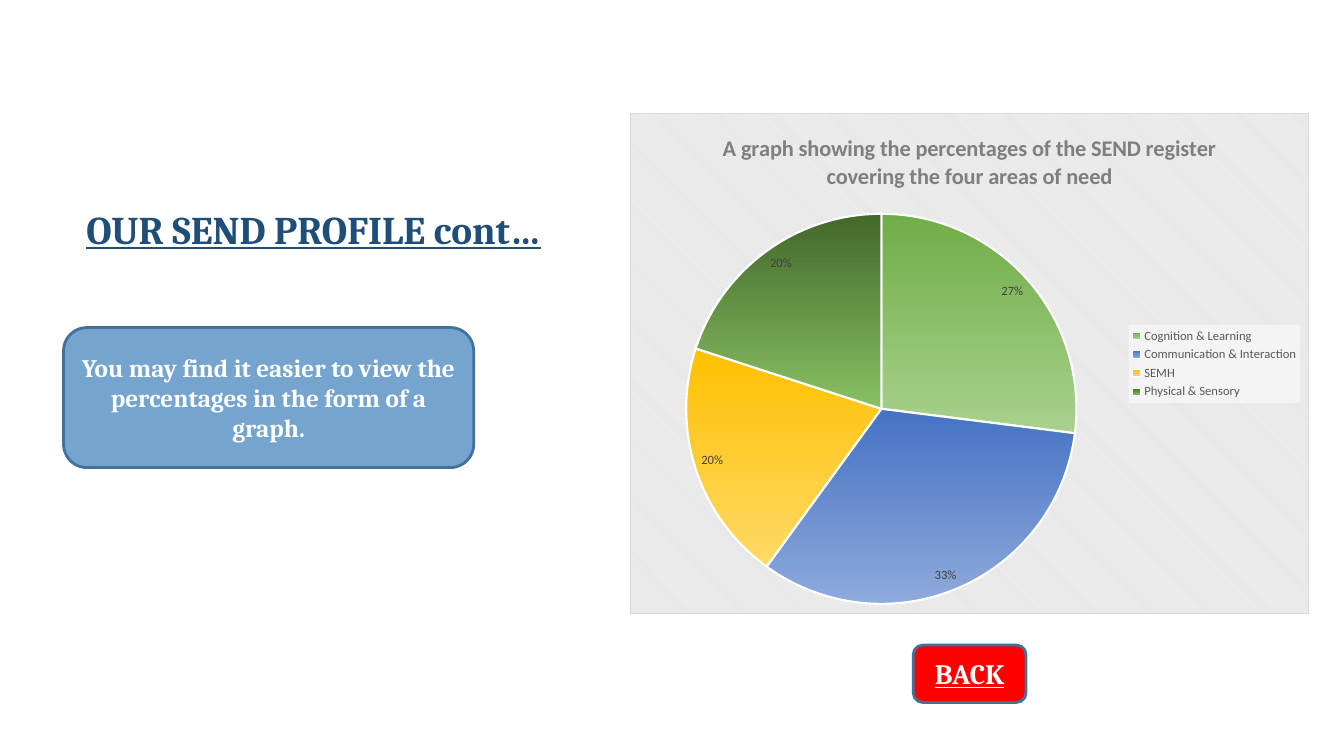
"""Build the SEND profile slide with a pie chart of the four areas of need."""
import lxml.etree
import pptx
import pptx.chart.data
import pptx.dml.color
import pptx.enum.chart
import pptx.enum.dml
import pptx.enum.shapes
import pptx.enum.text
import pptx.oxml
import pptx.oxml.ns
import pptx.util

Pt = pptx.util.Pt
RGBColor = pptx.dml.color.RGBColor
qn = pptx.oxml.ns.qn

NAVY = RGBColor(0x1E, 0x4E, 0x79)
BLUE = RGBColor(0x2E, 0x75, 0xB5)
OUTLINE = RGBColor(0x42, 0x71, 0x9B)
RED = RGBColor(0xFF, 0x00, 0x00)
WHITE = RGBColor(0xFF, 0xFF, 0xFF)
BLACK = RGBColor(0x00, 0x00, 0x00)
TITLE_GREY = RGBColor(0x7F, 0x7F, 0x7F)
LEGEND_GREY = RGBColor(0x59, 0x59, 0x59)
LABEL_GREY = RGBColor(0x40, 0x40, 0x40)
AREAS = [
    ("Cognition & Learning", 0.27, RGBColor(0x70, 0xAD, 0x47), RGBColor(0xA9, 0xD1, 0x8E)),
    ("Communication & Interaction", 0.33, RGBColor(0x44, 0x72, 0xC4), RGBColor(0x8F, 0xAA, 0xDC)),
    ("SEMH", 0.2, RGBColor(0xFF, 0xC0, 0x00), RGBColor(0xFF, 0xD9, 0x66)),
    ("Physical & Sensory", 0.2, RGBColor(0x43, 0x68, 0x2B), RGBColor(0x89, 0xC0, 0x64)),
]
NAMESPACES = (
    'xmlns:c="http://schemas.openxmlformats.org/drawingml/2006/chart" '
    'xmlns:a="http://schemas.openxmlformats.org/drawingml/2006/main"'
)


def style_font(font, name, size, color, bold=False, underline=False):
    font.name = name
    font.size = Pt(size)
    font.bold = bold
    font.underline = underline
    font.color.rgb = color


def write_centred(shape, text, size, color, underline):
    frame = shape.text_frame
    frame.word_wrap = True
    frame.vertical_anchor = pptx.enum.text.MSO_ANCHOR.MIDDLE
    paragraph = frame.paragraphs[0]
    paragraph.alignment = pptx.enum.text.PP_ALIGN.CENTER
    run = paragraph.add_run()
    run.text = text
    style_font(run.font, "Cambria", size, color, True, underline)
    return paragraph


presentation = pptx.Presentation()
presentation.slide_width = Pt(960)
presentation.slide_height = Pt(540)
slide = presentation.slides.add_slide(presentation.slide_layouts[5])

title = slide.shapes.title
title.left, title.top, title.width, title.height = Pt(20.2), Pt(126), Pt(407.5), Pt(78.5)
write_centred(title, "OUR SEND PROFILE cont…", 28, NAVY, True).line_spacing = 0.9

boxes = [
    ("You may find it easier to view the percentages in the form of a graph.",
     (45.4, 234, 293, 100), BLUE, 18, False),
    ("BACK", (652.3, 460.8, 80.6, 41), RED, 20, True),
]
for text, bounds, fill, size, underline in boxes:
    box = slide.shapes.add_shape(
        pptx.enum.shapes.MSO_SHAPE.ROUNDED_RECTANGLE, *map(Pt, bounds))
    box.shadow.inherit = False
    box.fill.solid()
    box.fill.fore_color.rgb = fill
    box.line.color.rgb = OUTLINE
    box.line.width = Pt(2)
    write_centred(box, text, size, WHITE, underline)
    if fill == BLUE:
        color_element = box.fill._xPr.find(qn("a:solidFill"))[0]
        lxml.etree.SubElement(color_element, qn("a:alpha"), val="66000")

chart_data = pptx.chart.data.CategoryChartData(number_format="0%")
chart_data.categories = [area[0] for area in AREAS]
chart_data.add_series("Series 1", [area[1] for area in AREAS])
chart = slide.shapes.add_chart(
    pptx.enum.chart.XL_CHART_TYPE.PIE,
    Pt(450), Pt(80.9), Pt(485), Pt(358), chart_data).chart
style_font(chart.font, "Calibri", 10, BLACK)

chart.has_title = True
run = chart.chart_title.text_frame.paragraphs[0].add_run()
run.text = "A graph showing the percentages of the SEND register covering the four areas of need"
style_font(run.font, "Calibri", 16, TITLE_GREY, True)

plot = chart.plots[0]
plot.vary_by_categories = True
for index, (name, value, top_color, bottom_color) in enumerate(AREAS):
    slice_format = plot.series[0].points[index].format
    slice_format.fill.gradient()
    slice_format.fill.gradient_angle = 270
    for stop, color in zip(slice_format.fill.gradient_stops, (top_color, bottom_color)):
        stop.color.rgb = color
    slice_format.line.color.rgb = WHITE
    slice_format.line.width = Pt(1.5)

plot.has_data_labels = True
labels = plot.data_labels
labels.show_value = True
labels.show_percentage = False
labels.number_format = "0%"
labels.number_format_is_linked = False
labels.position = pptx.enum.chart.XL_LABEL_POSITION.INSIDE_END
style_font(labels.font, "Calibri", 9, LABEL_GREY)

chart.has_legend = True
legend = chart.legend
legend.position = pptx.enum.chart.XL_LEGEND_POSITION.RIGHT
legend.include_in_layout = False
style_font(legend.font, "Calibri", 9, LEGEND_GREY)
legend._element.find(qn("c:overlay")).addnext(pptx.oxml.parse_xml(
    f'<c:spPr {NAMESPACES}><a:solidFill><a:srgbClr val="FFFFFF">'
    '<a:alpha val="50000"/></a:srgbClr></a:solidFill></c:spPr>'))

chart_space = chart._chartSpace
chart_space.find(qn("c:chart")).addnext(pptx.oxml.parse_xml(
    f'<c:spPr {NAMESPACES}><a:pattFill prst="dkDnDiag">'
    '<a:fgClr><a:srgbClr val="FFFFFF"/></a:fgClr>'
    '<a:bgClr><a:srgbClr val="E6E6E6"/></a:bgClr></a:pattFill>'
    '<a:ln w="9525"><a:solidFill><a:srgbClr val="D9D9D9"/></a:solidFill></a:ln></c:spPr>'))

plot_area = chart_space.find(qn("c:chart")).find(qn("c:plotArea"))
for layout in plot_area.findall(qn("c:layout")):
    plot_area.remove(layout)
plot_area.insert(0, pptx.oxml.parse_xml(
    f'<c:layout {NAMESPACES}><c:manualLayout><c:layoutTarget val="inner"/>'
    '<c:xMode val="edge"/><c:yMode val="edge"/><c:x val="0.08"/><c:y val="0.2"/>'
    '<c:w val="0.58"/><c:h val="0.78"/></c:manualLayout></c:layout>'))

presentation.save("out.pptx")
